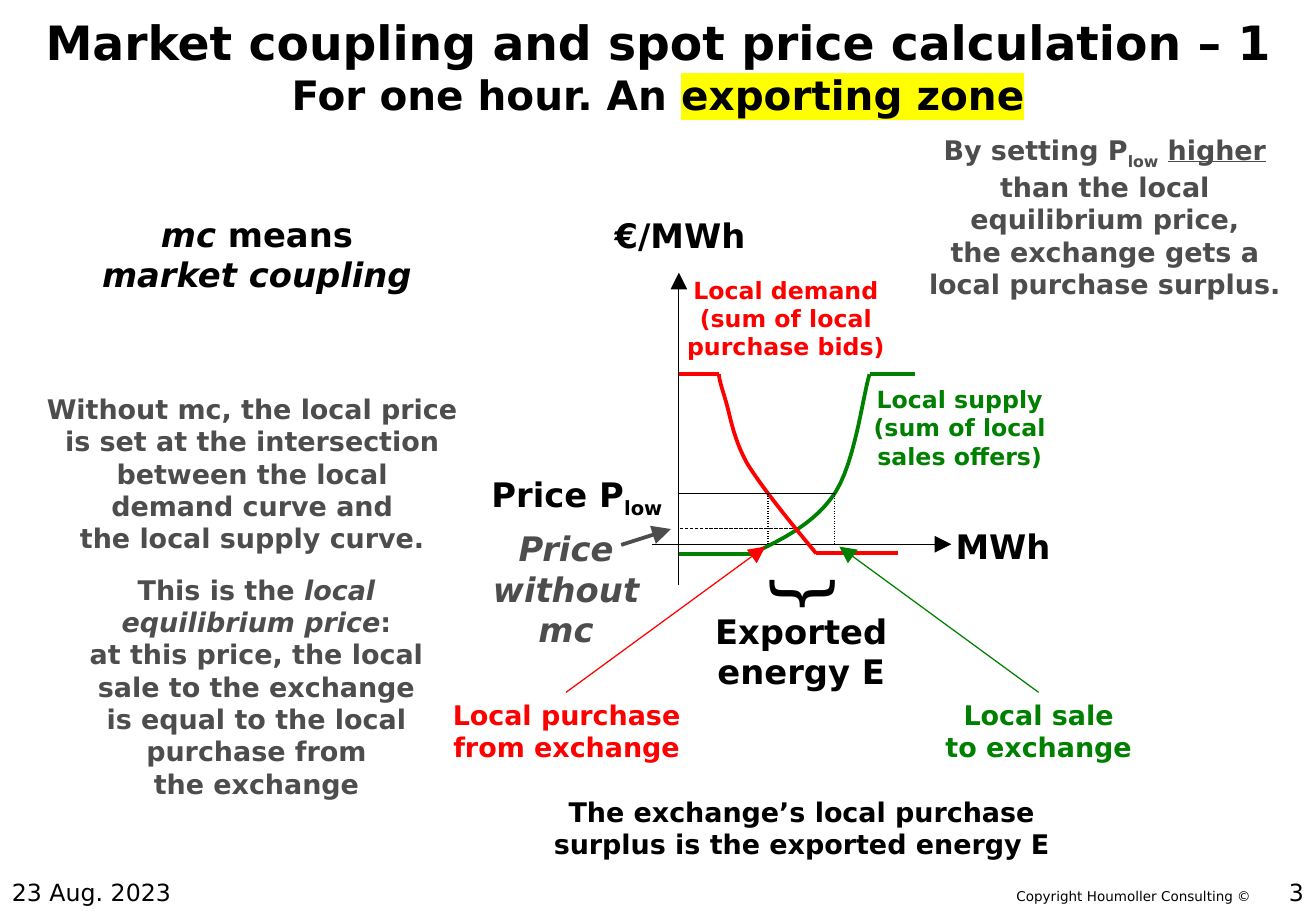
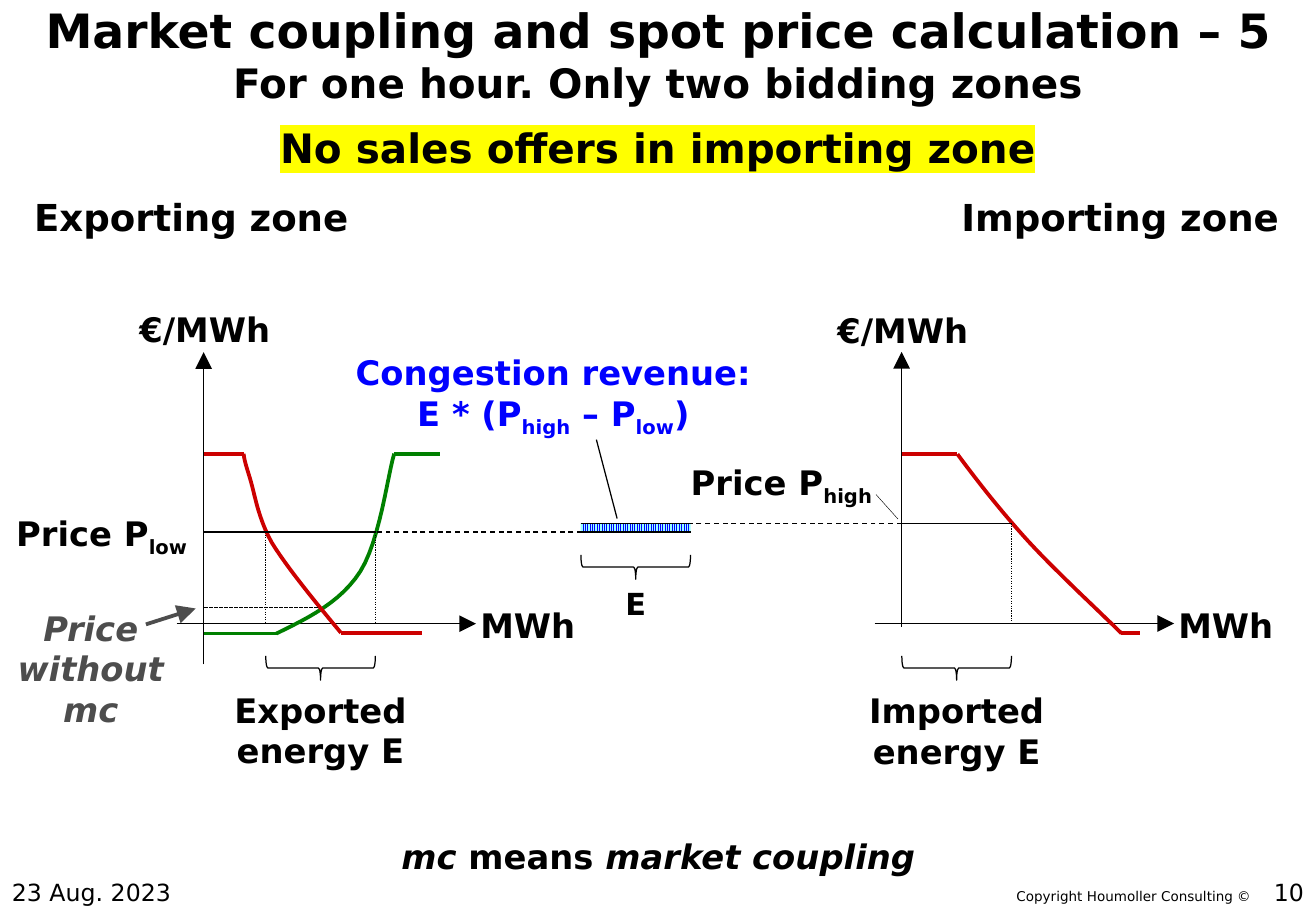
import pptx
import pptx.util
import pptx.dml.color
import pptx.enum.dml
import pptx.enum.shapes
import pptx.enum.text
import pptx.oxml
import pptx.oxml.ns

Pt = pptx.util.Pt
RGBColor = pptx.dml.color.RGBColor
Dash = pptx.enum.dml.MSO_LINE
Align = pptx.enum.text.PP_ALIGN
Anchor = pptx.enum.text.MSO_ANCHOR
Shape = pptx.enum.shapes.MSO_SHAPE

FONT = "DejaVu Sans"
BLACK = RGBColor(0, 0, 0)
WHITE = RGBColor(255, 255, 255)
GREY = RGBColor(0x4D, 0x4D, 0x4D)
RED = RGBColor(255, 0, 0)
DARK_RED = RGBColor(0xCC, 0, 0)
GREEN = RGBColor(0, 0x80, 0)
BLUE = RGBColor(0, 0, 255)
CYAN = RGBColor(0x99, 255, 255)
YELLOW = RGBColor(255, 255, 0)

SLIDE_WIDTH, SLIDE_HEIGHT = 780, 540
THIN, THICK = 0.75, 2.25
LINE_HEIGHT = 1.215
SUBSCRIPT = {"baseline": -25000}
ITALIC = {"italic": True}
HIGHLIGHT = {"highlight": YELLOW}

SUPPLY_CURVE = [(43.2, 5.8), (62.6, -3.6), (81.4, -13), (92.9, -31),
                (104.4, -49), (109.4, -89.3), (113, -100.8)]
DEMAND_CURVE = [(23.8, -100.8), (23.8, -98.6), (24.5, -95.8), (27.4, -86.4),
                (30.2, -77.8), (31.7, -64.1), (40.3, -48.2),
                (49.7, -33.1), (65.5, -13.7), (81.4, 5.4)]
IMPORT_DEMAND_CURVE = [(33.1, -100.4), (46.1, -82.8), (59.8, -65.5), (75.6, -48.2),
                       (92.2, -30.2), (121.7, -2.9), (130.3, 5.8)]


def add_element(parent, tag, **attributes):
    element = pptx.oxml.parse_xml(f"<{tag} {pptx.oxml.ns.nsdecls('a')}/>")
    for name, value in attributes.items():
        element.set(name, value)
    parent.append(element)


def add_run(paragraph, text, size, color, bold, italic=False, underline=None,
            baseline=None, highlight=None):
    run = paragraph.add_run()
    run.text = text
    font = run.font
    font.size, font.bold, font.italic, font.underline = Pt(size), bold, italic, underline
    font.color.rgb = color
    properties = run._r.get_or_add_rPr()
    if baseline:
        properties.set("baseline", str(baseline))
    if highlight:
        properties.append(pptx.oxml.parse_xml(
            f"<a:highlight {pptx.oxml.ns.nsdecls('a')}>"
            f'<a:srgbClr val="{highlight}"/></a:highlight>'))
    font.name = FONT


def add_text(slide, left, top, width, lines, size=20, color=BLACK, bold=True,
             italic=False, align=Align.CENTER, height=None, wrap=False):
    sizes = size if isinstance(size, list) else [size] * len(lines)
    box = slide.shapes.add_textbox(Pt(left), Pt(top), Pt(width),
                                   Pt(height or sum(sizes) * LINE_HEIGHT + 7.2))
    frame = box.text_frame
    frame.word_wrap = wrap
    if height:
        frame.vertical_anchor = Anchor.MIDDLE
    else:
        frame.auto_size = pptx.enum.text.MSO_AUTO_SIZE.SHAPE_TO_FIT_TEXT
    for index, (line, line_size) in enumerate(zip(lines, sizes)):
        paragraph = frame.add_paragraph() if index else frame.paragraphs[0]
        paragraph.alignment = align
        for piece in [line] if isinstance(line, str) else line:
            text, style = (piece, {}) if isinstance(piece, str) else piece
            add_run(paragraph, text, line_size, color, bold, **{"italic": italic, **style})
    return box


def add_line(slide, start, end, color=BLACK, width=THIN, dash=None, arrow=False):
    connector = slide.shapes.add_connector(
        pptx.enum.shapes.MSO_CONNECTOR.STRAIGHT, *map(Pt, start + end))
    connector.line.color.rgb = color
    connector.line.width = Pt(width)
    if dash:
        connector.line.dash_style = dash
    if arrow:
        add_element(connector.line._get_or_add_ln(), "a:tailEnd",
                    type="triangle", w="lg", len="lg")
    add_element(connector._element.spPr, "a:effectLst")


def bezier_points(controls, steps=12):
    points = [controls[0]]
    for first in range(0, len(controls) - 1, 3):
        corners = controls[first:first + 4]
        for step in range(1, steps + 1):
            t = step / steps
            weights = ((1 - t) ** 3, 3 * t * (1 - t) ** 2, 3 * t * t * (1 - t), t ** 3)
            points.append(tuple(sum(weight * corner[axis]
                                    for weight, corner in zip(weights, corners))
                                for axis in (0, 1)))
    return points


def add_curve(slide, x, y, controls, color, left_end, right_end):
    points = [(Pt(x + dx), Pt(y + dy)) for dx, dy in bezier_points(controls)]
    builder = slide.shapes.build_freeform(*points[0], scale=1.0)
    builder.add_line_segments(points[1:], close=False)
    shape = builder.convert_to_shape()
    shape.shadow.inherit = False
    shape.fill.background()
    shape.line.color.rgb = color
    shape.line.width = Pt(THICK)
    for (dx, dy), end in ((controls[0], left_end), (controls[-1], right_end)):
        add_line(slide, (x + dx, y + dy), (x + end, y + dy), color, THICK)


def add_brace(slide, center_x, center_y):
    width, span = 14.4, 65
    brace = slide.shapes.add_shape(Shape.RIGHT_BRACE, Pt(center_x - width / 2),
                                   Pt(center_y - span / 2), Pt(width), Pt(span))
    brace.rotation = 90
    brace.shadow.inherit = False
    brace.fill.background()
    brace.line.color.rgb = BLACK
    brace.line.width = Pt(THIN)


def add_axes(slide, x, y, depth, label_top):
    add_text(slide, x - 49, label_top, 99.4, ["€/MWh"])
    add_text(slide, x + 156.5, y - 14.6, 71.3, ["MWh"])
    add_line(slide, (x, y + depth), (x, y - 161), arrow=True)
    add_line(slide, (x - 16, y), (x + 161.5, y), arrow=True)


def add_exporting_zone(slide, x, y, label_top, demand_color, price, purchase, sale):
    add_axes(slide, x, y, 24.2, label_top)
    add_curve(slide, x, y, SUPPLY_CURVE, GREEN, 0, 140)
    add_curve(slide, x, y, DEMAND_CURVE, demand_color, 0, 129.6)
    add_line(slide, (x, y - price), (x + sale, y - price))
    for volume in (purchase, sale):
        add_line(slide, (x + volume, y - price), (x + volume, y), dash=Dash.ROUND_DOT)
    add_text(slide, x - 120.5, y - price - 15.3, 120.2, [["Price P", ("low", SUBSCRIPT)]])
    add_text(slide, x - 118, y - 13.2, 102.2, ["Price", "without", "mc"],
             color=GREY, italic=True)
    add_line(slide, (x - 34.2, y + 0.4), (x - 4.7, y - 9), GREY, THICK, arrow=True)
    add_line(slide, (x + 67.5, y - 9.4), (x, y - 9.4), dash=Dash.SQUARE_DOT)
    add_text(slide, x + (purchase + sale) / 2 - 58.3, y + 35.6, 116.6,
             ["Exported", "energy E"])


def add_frame(slide, number, title, subtitle, title_height):
    box = add_text(slide, 0, 1, SLIDE_WIDTH, [title, subtitle], [28, 24],
                   height=title_height, wrap=True)
    box.fill.solid()
    box.fill.fore_color.rgb = WHITE
    add_text(slide, 595.4, 522.7, 155.5, ["Copyright Houmoller Consulting ©"], 8,
             bold=False, align=Align.LEFT)
    for left, text, align in ((0, "23 Aug. 2023", Align.LEFT),
                              (617.4, str(number), Align.RIGHT)):
        add_text(slide, left, 510.5, 162.6, [text], 14, bold=False, align=align, height=36)


def build_exporting_slide(slide):
    add_frame(slide, 3, "Market coupling and spot price calculation – 1",
              ["For one hour. An ", ("exporting zone", HIGHLIGHT)], 76.3)
    x, y = 402.4, 322.6
    add_exporting_zone(slide, x, y, 123.8, RED, price=30.2, purchase=52.9, sale=92.2)
    brace = add_text(slide, 465.1, 316.8, 28.8, ["}"], 42, bold=False, wrap=True)
    brace.rotation = 90
    add_text(slide, 553, 410.4, 125.3, ["Local sale", "to exchange"], 16, GREEN)
    add_line(slide, (615.6, 410.4), (497.5, 324), GREEN, arrow=True)
    add_text(slide, 260.6, 410.4, 150.5, ["Local purchase", "from exchange"], 16, RED)
    add_line(slide, (335.5, 410.4), (453.6, 324), RED, arrow=True)
    add_text(slide, 399.6, 159.8, 132.5,
             ["Local demand", "(sum of local", "purchase bids)"], 14, RED)
    add_text(slide, 509.8, 224.6, 118.1,
             ["Local supply", "(sum of local", "sales offers)"], 14, GREEN)
    add_text(slide, 52.6, 123.1, 199.4,
             [[("mc", ITALIC), " means"], [("market coupling", ITALIC)]])
    add_text(slide, 320.4, 468, 309.6,
             ["The exchange’s local purchase", "surplus is the exported energy E"], 16)
    add_text(slide, 20.2, 229, 258.5,
             ["Without mc, the local price", "is set at the intersection",
              "between the local", "demand curve and", "the local supply curve."], 16, GREY)
    add_text(slide, 42, 336.2, 220,
             [["This is the ", ("local", ITALIC)], [("equilibrium price", ITALIC), ":"],
              "at this price, the local", "sale to the exchange",
              "is equal to the local", "purchase from", "the exchange"], 16, GREY)
    add_text(slide, 538.9, 75.6, 231.9,
             [["By setting P", ("low", SUBSCRIPT), " ", ("higher", {"underline": True})],
              "than the local", "equilibrium price,", "the exchange gets a",
              "local purchase surplus."], 16, GREY)


def add_importing_zone(slide, x, y, price, volume):
    add_axes(slide, x, y, 2, 180)
    add_curve(slide, x, y, IMPORT_DEMAND_CURVE, DARK_RED, 0, 141.1)
    add_line(slide, (x, y - price), (x + volume, y - price))
    add_line(slide, (x + volume, y - price), (x + volume, y - 1.5), dash=Dash.ROUND_DOT)
    add_line(slide, (x - 15.1, y - 76.4), (x - 2.2, y - 62), width=0.25)
    add_text(slide, x - 134.6, y - 99.5, 126.7, [["Price P", ("high", SUBSCRIPT)]])
    add_text(slide, x + volume / 2 - 60.8, 405.4, 121.7, ["Imported", "energy E"])
    add_brace(slide, x + volume / 2, 396)


def add_congestion_revenue(slide, left, width, high, low, export_end, import_start):
    right = left + width
    area = slide.shapes.add_shape(Shape.RECTANGLE, Pt(left), Pt(high), Pt(width), Pt(low - high))
    area.shadow.inherit = False
    area.line.fill.background()
    area.fill.patterned()
    area.fill.pattern = pptx.enum.dml.MSO_PATTERN.NARROW_VERTICAL
    area.fill.fore_color.rgb = BLUE
    area.fill.back_color.rgb = CYAN
    add_line(slide, (right - 18, low), (export_end, low), dash=Dash.DASH)
    add_line(slide, (import_start, high), (right - 19.4, high), dash=Dash.DASH)
    for level in (high, low):
        add_line(slide, (left, level), (right, level))
    add_text(slide, 198, 205.2, 260,
             ["Congestion revenue:",
              ["E * (P", ("high", SUBSCRIPT), " – P", ("low", SUBSCRIPT), ")"]], color=BLUE)
    add_line(slide, (353.5, 260.6), (365.8, 307.4))
    add_brace(slide, left + width / 2, 336.2)
    add_text(slide, left + width / 2 - 13.3, 343.4, 26.6, ["E"], 18)


def build_two_zones_slide(slide):
    add_frame(slide, 10, "Market coupling and spot price calculation – 5",
              "For one hour. Only two bidding zones", 62)
    add_text(slide, 157, 69.1, 465.8, [[("No sales offers in importing zone", HIGHLIGHT)]], 24)
    add_text(slide, 12.2, 111.6, 202.3, ["Exporting zone"], 22)
    add_text(slide, 560.2, 111.6, 207.4, ["Importing zone"], 22)
    export_x, export_y, purchase, sale = 120.7, 369.7, 36.7, 101.9
    import_x, import_y = 534.4, 369.6
    low, high = 315.4, 310.3
    add_exporting_zone(slide, export_x, export_y, 179.3, DARK_RED, export_y - low, purchase, sale)
    add_brace(slide, export_x + (purchase + sale) / 2, 396)
    add_importing_zone(slide, import_x, import_y, import_y - high, sale - purchase)
    add_congestion_revenue(slide, 344.2, sale - purchase, high, low, export_x + sale, import_x)
    add_text(slide, 229.7, 491.8, 321.1,
             [[("mc", ITALIC), " means ", ("market coupling", ITALIC)]])


def main():
    presentation = pptx.Presentation()
    presentation.slide_width = Pt(SLIDE_WIDTH)
    presentation.slide_height = Pt(SLIDE_HEIGHT)
    for build in (build_exporting_slide, build_two_zones_slide):
        build(presentation.slides.add_slide(presentation.slide_layouts[6]))
    presentation.save("out.pptx")


if __name__ == "__main__":
    main()
